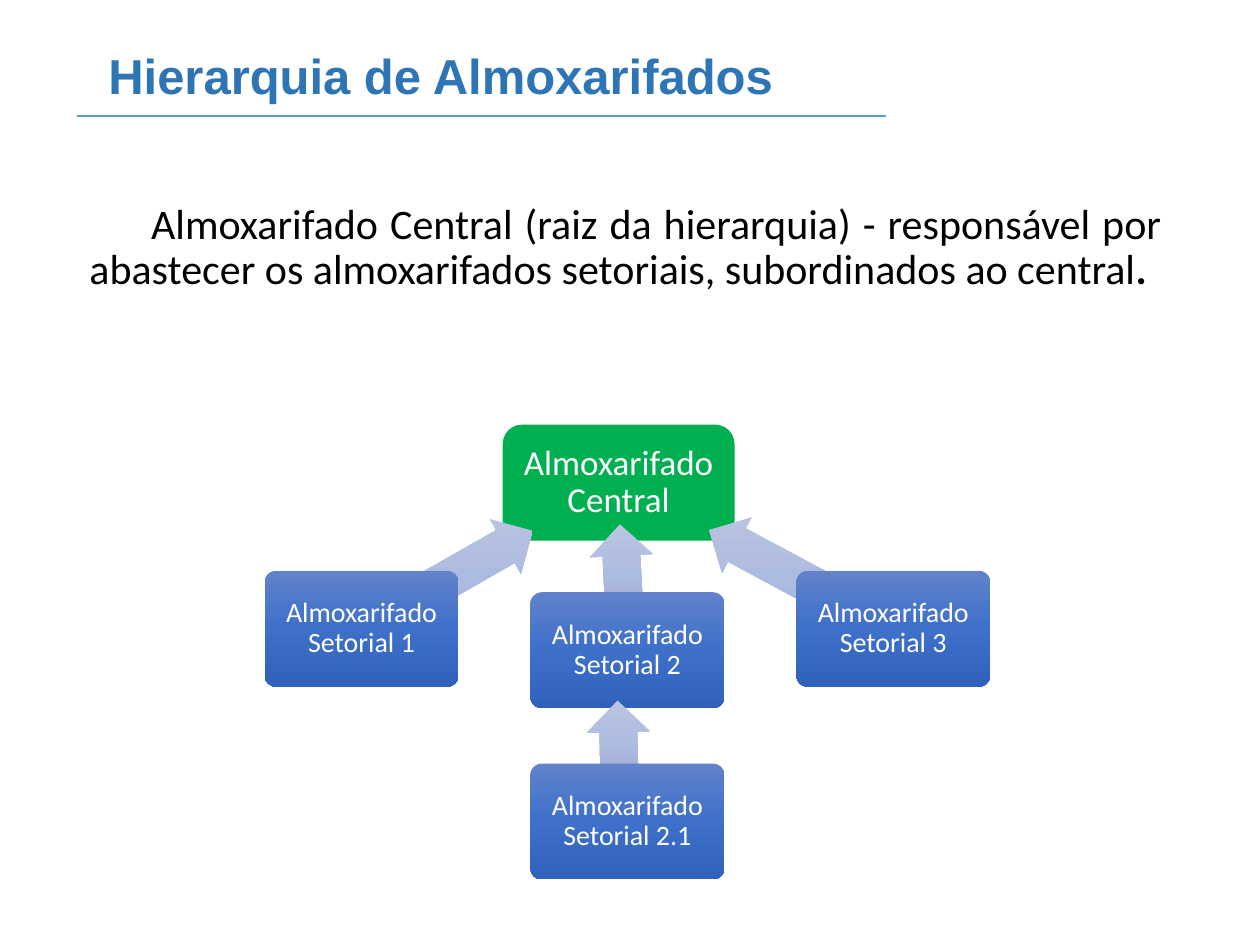
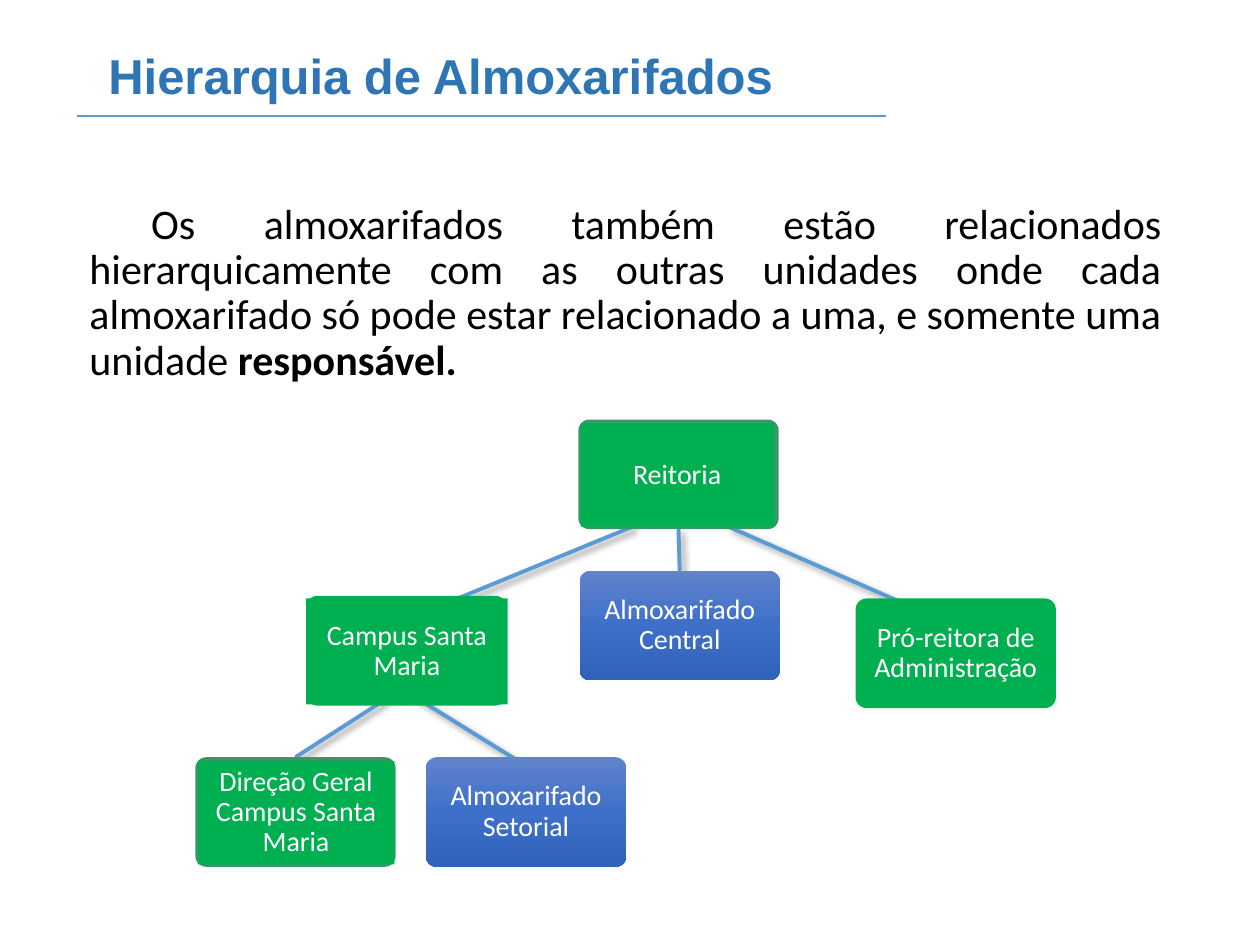
from lxml import etree
from pptx import Presentation
from pptx.dml.color import RGBColor
from pptx.enum.shapes import MSO_CONNECTOR, MSO_SHAPE
from pptx.enum.text import MSO_ANCHOR, MSO_AUTO_SIZE, PP_ALIGN
from pptx.oxml import parse_xml
from pptx.oxml.ns import nsdecls, qn
from pptx.util import Inches, Pt

STRAIGHT = MSO_CONNECTOR.STRAIGHT
ROUNDED = MSO_SHAPE.ROUNDED_RECTANGLE
ALTERNATE_PROCESS = MSO_SHAPE.FLOWCHART_ALTERNATE_PROCESS
RECTANGLE = MSO_SHAPE.RECTANGLE
LEFT_ARROW = MSO_SHAPE.LEFT_ARROW
TOP, MIDDLE = MSO_ANCHOR.TOP, MSO_ANCHOR.MIDDLE
LEFT, CENTER, JUSTIFY = PP_ALIGN.LEFT, PP_ALIGN.CENTER, PP_ALIGN.JUSTIFY
TOP_SIDE, BOTTOM_SIDE = 0, 2

COLORS = {
    "title": "2E75B6",
    "line": "5B9BD5",
    "text": "000000",
    "node_text": "FFFFFF",
    "green": "00B050",
    "green_edge": "339966",
}
BLUE_GRADIENT = ("6183CB", "3E70CA", "3062BB")
ARROW_GRADIENT = ("BBC5E3", "AEBBE0", "98A4CB")
TITLE_BOX = (0.61, 0.36, 8.71, 0.87)
BODY_BOX = (0.61, 1.56, 8.71, 1.99)


def color(name):
    return RGBColor.from_string(COLORS[name])


def place(shape, box):
    shape.left, shape.top, shape.width, shape.height = map(Inches, box)


def add_run(paragraph, text, font_name, size, color_name, bold=False):
    run = paragraph.add_run()
    run.text = text
    run.font.name = font_name
    run.font.size = Pt(size)
    run.font.bold = bold
    run.font.color.rgb = color(color_name)


def format_paragraph(paragraph, alignment, margin=0, indent=0):
    """Set alignment, indents in inches and tight spacing, without a bullet."""
    properties = paragraph._p.get_or_add_pPr()
    properties.set("marL", str(Inches(margin)))
    properties.set("indent", str(Inches(indent)))
    etree.SubElement(properties, qn("a:buNone"))
    paragraph.alignment = alignment
    paragraph.line_spacing = 0.9
    paragraph.space_before = Pt(0)


def prepare_placeholder(placeholder, box):
    place(placeholder, box)
    frame = placeholder.text_frame
    frame.word_wrap = True
    frame.auto_size = MSO_AUTO_SIZE.NONE
    frame.vertical_anchor = TOP
    return frame.paragraphs[0]


def add_line(slide, origin, start, end, width):
    """Draw a line between two points measured from the origin."""
    points = [Inches(origin[axis] + point[axis]) for point in (start, end) for axis in (0, 1)]
    line = slide.shapes.add_connector(STRAIGHT, *points)
    line.line.color.rgb = color("line")
    line.line.width = Pt(width)
    etree.SubElement(line._element.spPr, qn("a:effectLst"))
    return line


def add_shadow(line):
    shadow = parse_xml(
        f'<a:outerShdw {nsdecls("a")} blurRad="{Pt(4)}" dist="{Pt(3)}" dir="2700000" rotWithShape="0">'
        '<a:srgbClr val="000000"><a:alpha val="40000"/></a:srgbClr></a:outerShdw>')
    line._element.spPr.find(qn("a:effectLst")).append(shadow)


def fill_gradient(shape, stops):
    """Fill from top to bottom with three stops, whatever the rotation."""
    shape.fill.gradient()
    gradient = shape._element.spPr.find(qn("a:gradFill"))
    stop_xml = "".join(
        f'<a:gs pos="{index * 50000}"><a:srgbClr val="{value}"/></a:gs>'
        for index, value in enumerate(stops))
    gradient.getparent().replace(gradient, parse_xml(
        f'<a:gradFill {nsdecls("a")} rotWithShape="0"><a:gsLst>{stop_xml}</a:gsLst>'
        '<a:lin ang="5400000" scaled="0"/></a:gradFill>'))


def add_block(slide, kind, origin, offset, size, fill):
    """Add a borderless shape; fill is a colour name or a tuple of gradient stops."""
    box = (origin[0] + offset[0], origin[1] + offset[1], *size)
    shape = slide.shapes.add_shape(kind, *map(Inches, box))
    shape.shadow.inherit = False
    shape.line.fill.background()
    if isinstance(fill, tuple):
        fill_gradient(shape, fill)
    else:
        shape.fill.solid()
        shape.fill.fore_color.rgb = color(fill)
    if kind == ROUNDED:
        shape.adjustments[0] = 0.1
    return shape


def add_label(shape, text, size=16):
    frame = shape.text_frame
    frame.word_wrap = True
    frame.vertical_anchor = MIDDLE
    frame.margin_left = frame.margin_right = Inches(0.03)
    frame.margin_top = frame.margin_bottom = Inches(0.03)
    paragraph = frame.paragraphs[0]
    paragraph.alignment = CENTER
    paragraph.line_spacing = 0.9
    add_run(paragraph, text, "Calibri", size, "node_text")


def add_arrow(slide, origin, offset, length, rotation):
    arrow = add_block(slide, LEFT_ARROW, origin, offset, (length, 0.5), ARROW_GRADIENT)
    arrow.adjustments[0], arrow.adjustments[1] = 0.6, 0.5
    arrow.rotation = rotation


def add_text_slide(presentation, text, bold_ending):
    slide = presentation.slides.add_slide(presentation.slide_layouts[1])
    title = prepare_placeholder(slide.shapes.title, TITLE_BOX)
    format_paragraph(title, LEFT, 0.5, -0.35)
    title.space_after = Pt(6)
    add_run(title, "Hierarquia de Almoxarifados", "Arial", 28, "title", True)
    add_line(slide, TITLE_BOX[:2], (0, 0.56), (6.42, 0.56), 1)

    body = prepare_placeholder(slide.placeholders[1], BODY_BOX)
    format_paragraph(body, JUSTIFY, 0, 0.49)
    add_run(body, text, "Calibri", 24, "text")
    add_run(body, bold_ending, "Calibri", 24, "text", True)
    return slide


def add_warehouse_tree(slide, origin):
    size = (1.54, 0.92)
    pitch = 2.11
    central = add_block(slide, ALTERNATE_PROCESS, origin, (1.89, 0), (1.84, 0.92), "green")
    add_label(central, "Almoxarifado Central", 20)
    # number, column, top, arrow offset, arrow length, arrow rotation
    sectors = [
        ("1", 0, 1.16, (0.67, 0.98), 1.56, 150.3),
        ("2", 1, 1.33, (2.43, 0.95), 0.82, 87.1),
        ("2.1", 1, 2.69, (2.46, 2.29), 0.7, 88.6),
        ("3", 2, 1.16, (3.43, 0.98), 1.66, 28.2),
    ]
    for number, column, top, arrow_offset, length, rotation in sectors:
        add_arrow(slide, origin, arrow_offset, length, rotation)
        sector = add_block(slide, ROUNDED, origin, (column * pitch, top), size, BLUE_GRADIENT)
        add_label(sector, f"Almoxarifado Setorial {number}")


def add_unit_tree(slide, origin):
    size = (1.59, 0.87)
    branches = {
        "sector": ((2.79, 2.85), (1.66, 2.15)),
        "direction": ((1.51, 2.22), (0.75, 2.68)),
        "administration": ((4.23, 0.85), (5.67, 1.48)),
        "campus": ((3.47, 0.85), (2.01, 1.45)),
        "central": ((3.84, 0.87), (3.84, 1.2)),
    }
    lines = {}
    for name, (start, end) in branches.items():
        lines[name] = add_line(slide, origin, start, end, 2.25)
        add_shadow(lines[name])

    # name, text, offset, fill, panel (offset within the node, size)
    units = [
        ("central", "Almoxarifado Central", (3.05, 1.2), BLUE_GRADIENT, None),
        ("sector", "Almoxarifado Setorial", (1.83, 2.68), BLUE_GRADIENT, None),
        ("rectory", "Reitoria", (3.04, 0), "green_edge", ((0.02, 0.03), (1.53, 0.82))),
        ("campus", "Campus Santa Maria", (0.88, 1.4), "green", ((0, 0.02), (1.6, 0.84))),
        ("administration", "Pró-reitora de Administração", (5.24, 1.42), "green", None),
        ("direction", "Direção Geral Campus Santa Maria", (0, 2.68), "green_edge",
         ((0.02, 0.03), (1.56, 0.82))),
    ]
    nodes = {}
    for name, text, offset, fill, panel in units:
        nodes[name] = label_shape = add_block(slide, ROUNDED, origin, offset, size, fill)
        if panel:
            inset, panel_size = panel
            panel_offset = (offset[0] + inset[0], offset[1] + inset[1])
            label_shape = add_block(slide, RECTANGLE, origin, panel_offset, panel_size, "green")
        add_label(label_shape, text)

    lines["central"].begin_connect(nodes["rectory"], BOTTOM_SIDE)
    lines["central"].end_connect(nodes["central"], TOP_SIDE)
    lines["direction"].end_connect(nodes["direction"], TOP_SIDE)


def main():
    presentation = Presentation()
    presentation.slide_width, presentation.slide_height = Inches(10), Inches(7.5)

    warehouses = add_text_slide(
        presentation,
        "Almoxarifado Central (raiz da hierarquia) - responsável por abastecer os "
        "almoxarifados setoriais, subordinados ao central", ".")
    add_warehouse_tree(warehouses, (2.1, 3.37))

    units = add_text_slide(
        presentation,
        "Os almoxarifados também estão relacionados hierarquicamente com as outras "
        "unidades onde cada almoxarifado só pode estar relacionado a uma, e somente "
        "uma unidade ", "responsável.")
    add_unit_tree(units, (1.55, 3.33))

    presentation.save("out.pptx")


if __name__ == "__main__":
    main()
